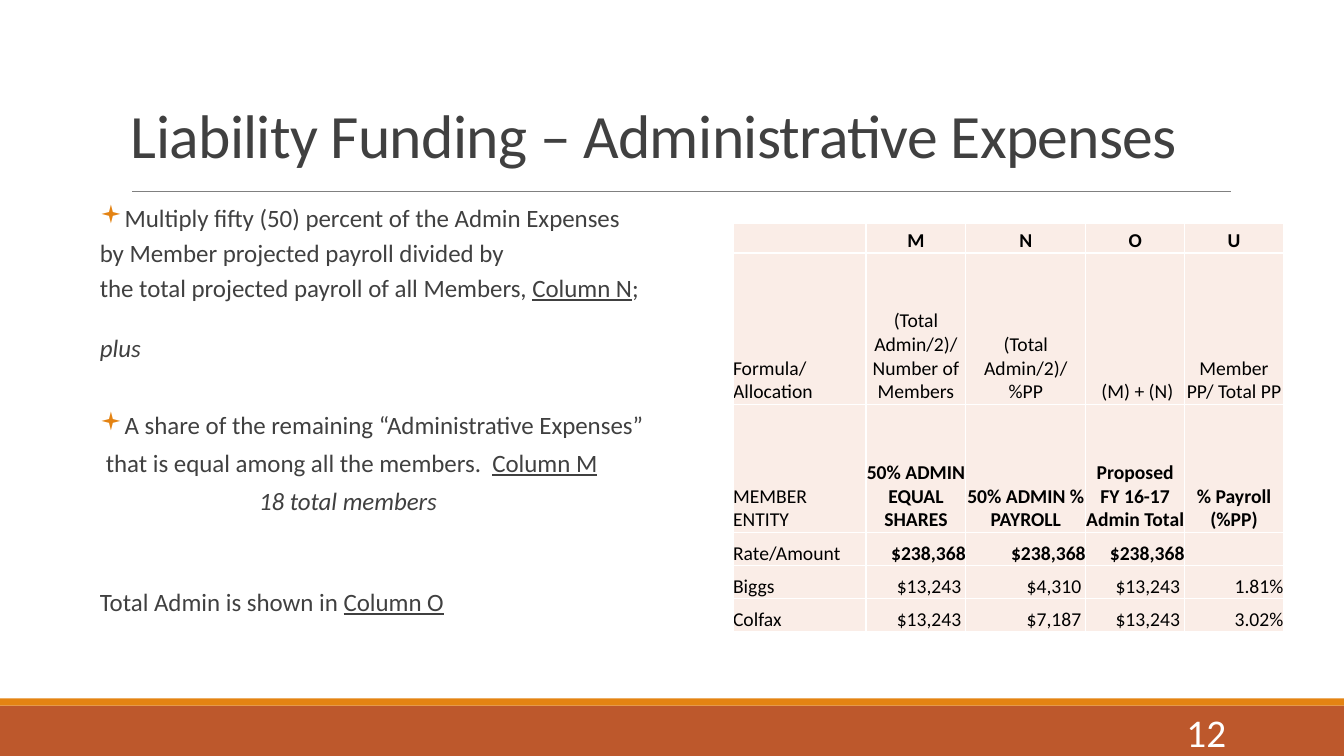
"""Build the slide on liability funding and administrative expenses."""
from dataclasses import dataclass

from lxml import etree
from pptx import Presentation
from pptx.dml.color import RGBColor
from pptx.enum.shapes import MSO_CONNECTOR, MSO_SHAPE
from pptx.enum.text import MSO_ANCHOR, PP_ALIGN
from pptx.oxml.ns import qn
from pptx.util import Inches, Pt

LEFT, CENTER, RIGHT = PP_ALIGN.LEFT, PP_ALIGN.CENTER, PP_ALIGN.RIGHT
TOP, MIDDLE, BOTTOM = MSO_ANCHOR.TOP, MSO_ANCHOR.MIDDLE, MSO_ANCHOR.BOTTOM
RECTANGLE, STRAIGHT = MSO_SHAPE.RECTANGLE, MSO_CONNECTOR.STRAIGHT


@dataclass(frozen=True)
class Theme:
    """Colours, font and type sizes."""
    font: str = "Calibri"
    ink: str = "404040"
    black: str = "000000"
    white: str = "FFFFFF"
    rule: str = "808080"
    accent: str = "E48312"
    footer: str = "BD582C"
    cell: str = "FAEDE7"
    title_size: float = 44
    body_size: float = 17.8
    table_size: float = 14
    number_size: float = 28


THEME = Theme()
WIDTH, HEIGHT = 13.33, 7.5
TITLE = "Liability Funding – Administrative Expenses"
SLIDE_NUMBER = "12"

TITLE_BOX = (1.2, 0.16, 11.16, 1.59)
BODY_BOX = (0.77, 1.99, 6.14, 4.73)
NUMBER_BOX = (10.83, 7.06, 1.43, 0.4)
BANDS = [(7, 0.5, THEME.footer), (6.93, 0.07, THEME.accent)]
RULE_LEFT, RULE_RIGHT, RULE_TOP = 1.31, 12.21, 1.9

BULLET_HANG = 0.2
# fields: bulleted, left indent, line spacing, space before, runs (text, style)
BODY = [
    (True, 0.22, 0.9, 0, [("Multiply fifty (50) percent of the Admin Expenses", "")]),
    (False, 0.22, 0.9, 2, [("by Member projected payroll divided by", "")]),
    (False, 0.22, 0.9, 2, [("the total projected payroll of all Members, ", ""),
                           ("Column N", "u"), (";", "")]),
    (False, 0.22, 0.7, 23.2, [("plus", "i")]),
    (True, 0.22, 1, 29.7, [("A share of the remaining “Administrative Expenses”", "")]),
    (False, 0.28, 1, 2, [("that is equal among all the members.  ", ""),
                         ("Column M", "u")]),
    (False, 1.8, 1, 2, [("18 total members", "i")]),
    (False, 0.22, 0.7, 52.4, [("Total Admin is shown in ", ""), ("Column O", "u")]),
]

TABLE_LEFT, TABLE_TOP = 7.27, 2.22
COLUMNS = [1.32, 0.99, 1.19, 0.98, 0.98]
ROWS = [
    (0.29, CENTER, True, ["", "M", "N", "O", "U"]),
    (1.5, CENTER, False, ["Formula/Allocation", "(Total Admin/2)/ Number of Members",
                          "(Total Admin/2)/ %PP", " (M) + (N)", "Member PP/ Total PP"]),
    (1.27, CENTER, True, ["MEMBER ENTITY", "50% ADMIN EQUAL SHARES", "50% ADMIN % PAYROLL",
                          "Proposed\nFY 16-17\nAdmin Total", "% Payroll (%PP)"]),
    (0.33, RIGHT, True, ["Rate/Amount", "$238,368", "$238,368", "$238,368", ""]),
    (0.33, RIGHT, False, ["Biggs", "$13,243 ", "$4,310 ", "$13,243 ", "1.81%"]),
    (0.33, RIGHT, False, ["Colfax", "$13,243 ", "$7,187 ", "$13,243 ", "3.02%"]),
]


def color(value):
    return RGBColor.from_string(value)


def add_run(paragraph, text, size, ink, bold=False, style=""):
    run = paragraph.add_run()
    run.text = text
    font = run.font
    font.name, font.size, font.bold = THEME.font, Pt(size), bold
    font.italic, font.underline = "i" in style, "u" in style
    font.color.rgb = color(ink)
    return run


def add_text_frame(slide, box, anchor, side_inset=0.1):
    shape = slide.shapes.add_textbox(*map(Inches, box))
    frame = shape.text_frame
    frame.word_wrap = True
    frame.vertical_anchor = anchor
    frame.margin_left = frame.margin_right = Inches(side_inset)
    return frame


def add_decoration(slide):
    for top, height, fill in BANDS:
        shape = slide.shapes.add_shape(
            RECTANGLE, 0, Inches(top), Inches(WIDTH), Inches(height))
        shape.shadow.inherit = False
        shape.fill.solid()
        shape.fill.fore_color.rgb = color(fill)
        shape.line.fill.background()
    rule = slide.shapes.add_connector(
        STRAIGHT, *map(Inches, (RULE_LEFT, RULE_TOP, RULE_RIGHT, RULE_TOP)))
    rule.line.color.rgb = color(THEME.rule)
    rule.line.width = Pt(0.5)
    etree.SubElement(rule._element.spPr, qn("a:effectLst"))


def add_title(slide):
    paragraph = add_text_frame(slide, TITLE_BOX, BOTTOM).paragraphs[0]
    paragraph.line_spacing = 0.85
    run = add_run(paragraph, TITLE, THEME.title_size, THEME.ink)
    run.font._element.set("spc", "-50")


def set_indent(paragraph, left, bulleted):
    properties = paragraph._p.get_or_add_pPr()
    hang = BULLET_HANG if bulleted else 0
    properties.set("marL", str(Inches(left + hang)))
    properties.set("indent", str(-Inches(hang)))
    if bulleted:
        bullet_color = etree.SubElement(properties, qn("a:buClr"))
        etree.SubElement(bullet_color, qn("a:srgbClr"), val=THEME.accent)
        etree.SubElement(properties, qn("a:buFont"), typeface="Wingdings")
        etree.SubElement(properties, qn("a:buChar"), char="▪")


def add_body(slide):
    frame = add_text_frame(slide, BODY_BOX, TOP, 0)
    for index, (bulleted, left, spacing, before, runs) in enumerate(BODY):
        paragraph = frame.add_paragraph() if index else frame.paragraphs[0]
        paragraph.line_spacing = spacing
        paragraph.space_before, paragraph.space_after = Pt(before), Pt(4)
        set_indent(paragraph, left, bulleted)
        for text, style in runs:
            add_run(paragraph, text, THEME.body_size, THEME.ink, style=style)


def format_cell(cell):
    cell.margin_left = cell.margin_right = cell.margin_top = cell.margin_bottom = 0
    cell.vertical_anchor = BOTTOM
    properties = cell._tc.get_or_add_tcPr()
    for side in ("lnL", "lnR", "lnT", "lnB"):
        border = etree.SubElement(properties, qn(f"a:{side}"), w=str(Pt(1)))
        fill = etree.SubElement(border, qn("a:solidFill"))
        etree.SubElement(fill, qn("a:srgbClr"), val=THEME.white)
    cell.fill.solid()
    cell.fill.fore_color.rgb = color(THEME.cell)


def fill_cell(cell, text, alignment, bold):
    paragraph = cell.text_frame.paragraphs[0]
    paragraph.alignment = alignment
    if not text:
        etree.SubElement(paragraph._p, qn("a:endParaRPr"), sz=str(THEME.table_size * 100))
        return
    for index, line in enumerate(text.split("\n")):
        if index:
            paragraph.add_line_break()
        add_run(paragraph, line, THEME.table_size, THEME.black, bold)


def add_funding_table(slide):
    size = (sum(COLUMNS), sum(row[0] for row in ROWS))
    table = slide.shapes.add_table(
        len(ROWS), len(COLUMNS), *map(Inches, (TABLE_LEFT, TABLE_TOP, *size))).table
    table.first_row = table.horz_banding = False
    for column, width in zip(table.columns, COLUMNS):
        column.width = Inches(width)
    for row, (height, alignment, bold, texts) in zip(table.rows, ROWS):
        row.height = Inches(height)
        for index, (cell, text) in enumerate(zip(row.cells, texts)):
            format_cell(cell)
            fill_cell(cell, text, alignment if index else LEFT, bold and index > 0)


def add_slide_number(slide):
    paragraph = add_text_frame(slide, NUMBER_BOX, MIDDLE).paragraphs[0]
    paragraph.alignment = RIGHT
    add_run(paragraph, SLIDE_NUMBER, THEME.number_size, THEME.white)


def main():
    presentation = Presentation()
    presentation.slide_width, presentation.slide_height = Inches(WIDTH), Inches(HEIGHT)
    slide = presentation.slides.add_slide(presentation.slide_layouts[6])
    for add_part in (add_decoration, add_title, add_body, add_funding_table, add_slide_number):
        add_part(slide)
    presentation.save("out.pptx")


if __name__ == "__main__":
    main()
